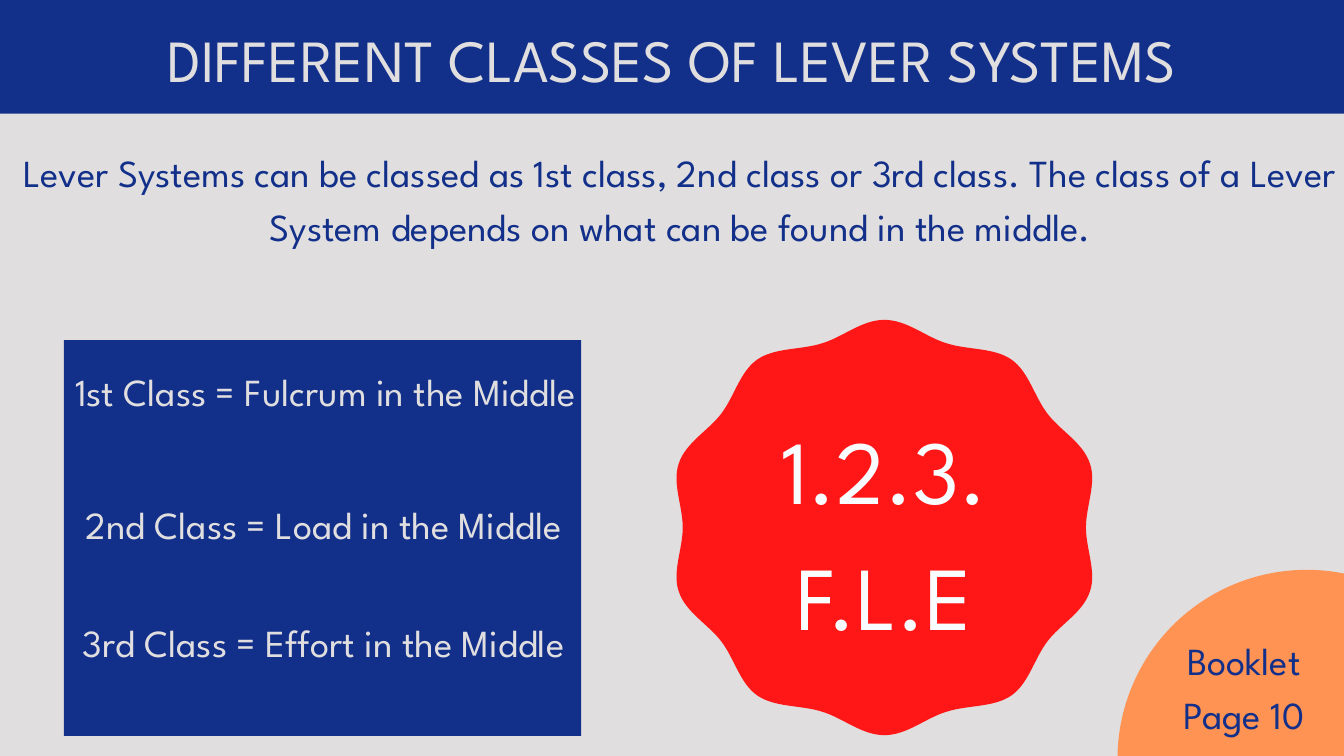
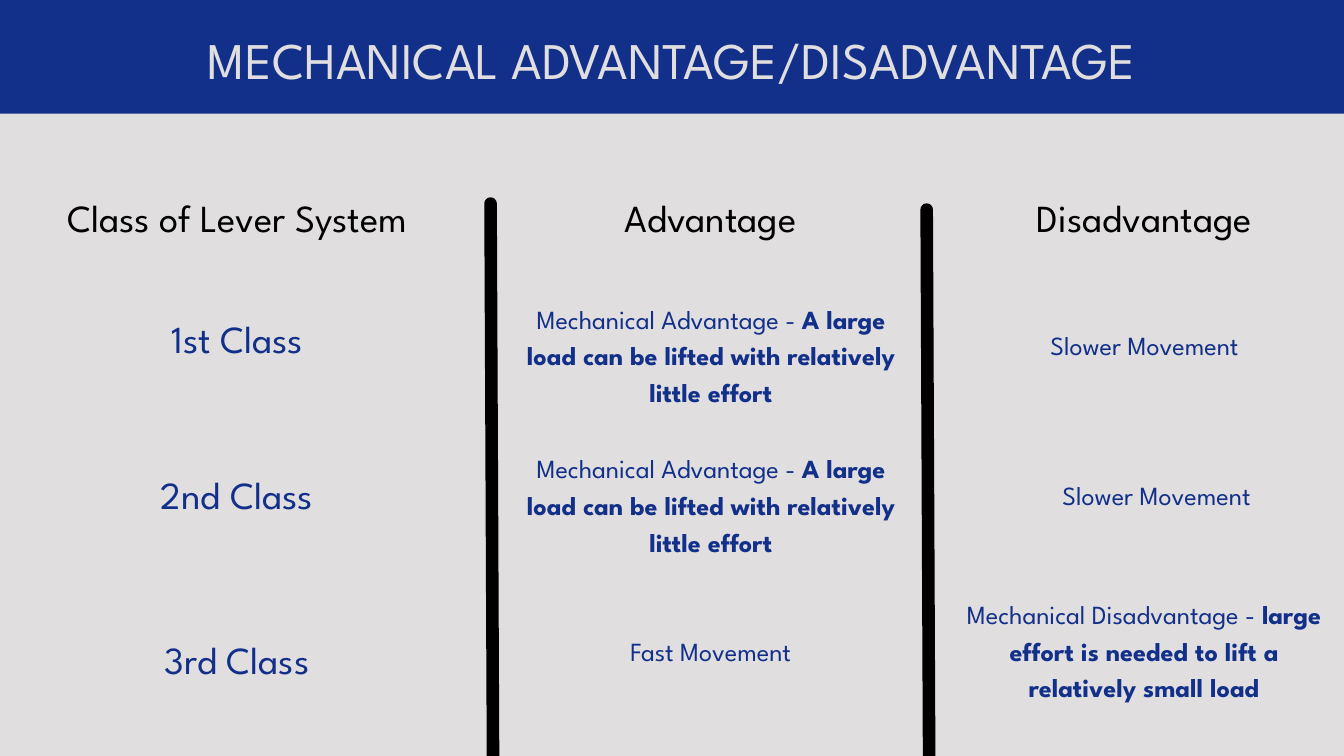
from pptx import Presentation
from pptx.dml.color import RGBColor
from pptx.enum.shapes import MSO_CONNECTOR as Conn, MSO_SHAPE as Kind
from pptx.enum.text import MSO_AUTO_SIZE as Fit, PP_ALIGN as Align
from pptx.util import Inches, Pt
from lxml.etree import SubElement
from pptx.oxml.ns import qn

BLUE, GREY, ORANGE, RED = "12308A", "E0DEDF", "FF9353", "FF1616"
BLACK, WHITE = "000000", "F8FCFE"
FONT = "League Spartan"


def paint(shape, hue):
    """Give a shape a plain fill with no outline or shadow."""
    shape.fill.solid()
    shape.fill.fore_color.rgb = RGBColor.from_string(hue)
    shape.line.fill.background()
    shape.shadow.inherit = False


def write(slide, text, at, size=41, hue=BLUE, lead=57.5, bold=""):
    """Add centred text, one paragraph per line; bold text follows the last."""
    frame = slide.shapes.add_textbox(*map(Inches, at)).text_frame
    frame.word_wrap = True
    frame.auto_size = Fit.SHAPE_TO_FIT_TEXT
    frame.margin_left = frame.margin_right = 0
    frame.margin_top = frame.margin_bottom = 0
    for i, row in enumerate(text.split("\n")):
        para = frame.add_paragraph() if i else frame.paragraphs[0]
        para.alignment = Align.CENTER
        para.line_spacing = Pt(lead)
        para.add_run().text = row
    if bold:
        run = para.add_run()
        run.text = bold
        run.font.bold = True
    for para in frame.paragraphs:
        for run in para.runs:
            run.font.name = FONT
            run.font.size = Pt(size)
            run.font.color.rgb = RGBColor.from_string(hue)


deck = Presentation()
deck.slide_width, deck.slide_height = Inches(20), Inches(11.25)

# Shared background, band and title
slides = []
for title, top, high, size, lead in [
    ("DIFFERENT CLASSES OF LEVER SYSTEMS", 0.16, 1.2, 64, 89.6),
    ("MECHANICAL ADVANTAGE/DISADVANTAGE", 0.26, 1.03, 55, 77),
]:
    slide = deck.slides.add_slide(deck.slide_layouts[6])
    slide.background.fill.solid()
    slide.background.fill.fore_color.rgb = RGBColor.from_string(GREY)
    band = slide.shapes.add_shape(
        Kind.RECTANGLE, 0, Inches(-0.03), Inches(20), Inches(1.72))
    paint(band, BLUE)
    slides.append(slide)
    write(slide, title, (-4.23, top, 28.45, high),
          size=size, hue=GREY, lead=lead)
levers, merits = slides

# Slide 1: page marker, badge and class panel
disc = levers.shapes.add_shape(
    Kind.OVAL, *map(Inches, (16.63, 8.48, 5.63, 5.63)))
paint(disc, ORANGE)

# Upper right quarter of the badge: Bezier knots and handles from its centre
arc = [
    (0, -3.09), (0.34, -3.09), (0.62, -2.83),
    (0.93, -2.74), (1.24, -2.64), (1.63, -2.68),
    (1.89, -2.5), (2.15, -2.32), (2.23, -1.95),
    (2.43, -1.69), (2.62, -1.44), (2.96, -1.26),
    (3.06, -0.95), (3.16, -0.66), (3, -0.32), (3, 0),
]
half = arc + [(x, -y) for x, y in arc[-2::-1]]
ring = half + [(-x, y) for x, y in half[-2:0:-1]]
spots = [(Inches(13.16 + x), Inches(7.85 + y)) for x, y in ring]
draft = levers.shapes.build_freeform(*spots[0])
draft.add_line_segments(spots[1:] + spots[:1], close=True)
badge = draft.convert_to_shape()
paint(badge, RED)

# Join each three straight steps into one curve
steps = list(badge._element.iter(qn("a:lnTo")))
for first, mid, last in zip(steps[::3], steps[1::3], steps[2::3]):
    first.tag = qn("a:cubicBezTo")
    for step in (mid, last):
        first.append(step[0])
        step.getparent().remove(step)

panel = levers.shapes.add_shape(
    Kind.RECTANGLE, *map(Inches, (0.95, 5.06, 7.7, 5.89)))
paint(panel, BLUE)

write(levers, "Booklet \nPage 10 ", (17.35, 9.37, 2.47, 1.55))
write(levers, "Lever Systems can be classed as 1st class, 2nd class or 3rd class. "
      "The class of a Lever System depends on what can be found in the middle.",
      (0.26, 2.11, 19.74, 2.37))
for text, left, top, width in [
    ("1st Class = Fulcrum in the Middle", 0.26, 5.36, 9.18),
    ("2nd Class = Load in the Middle", 0.52, 7.34, 8.6),
    ("3rd Class = Effort in the Middle", 0.52, 9.1, 8.6),
]:
    write(levers, text, (left, top, width, 1.58), hue=GREY)
write(levers, "1.2.3.\nF.L.E", (11.23, 5.9, 3.86, 3.69),
      size=96.5, hue=WHITE, lead=135.1)

# Slide 2: headings, rules and three rows of classes
for text, left, width in [
    ("Class of Lever System", 0.33, 6.41),
    ("Advantage", 8.92, 3.31),
    ("Disadvantage", 14.97, 4.12),
]:
    write(merits, text, (left, 2.78, width, 0.78), hue=BLACK)

for left, top in [(7.3, 3.03), (13.79, 3.12)]:
    rule = merits.shapes.add_connector(
        Conn.STRAIGHT, Inches(left + 0.04), Inches(top + 8.91),
        Inches(left), Inches(top))
    rule.line.color.rgb = RGBColor.from_string(BLACK)
    rule.line.width = Pt(13.5)
    rule.line._get_or_add_ln().set("cap", "rnd")
    SubElement(rule._element.spPr, qn("a:effectLst"))

for text, left, top, width in [
    ("1st Class", 2.31, 4.57, 2.45),
    ("2nd Class", 2.08, 6.89, 2.9),
    ("3rd Class", 2.15, 9.35, 2.76),
]:
    write(merits, text, (left, top, width, 0.78))

gain = "A large load can be lifted with relatively little effort"
loss = " large effort is needed to lift a relatively small load"
for text, bold, at in [
    ("Mechanical Advantage - ", gain, (7.74, 4.43, 5.68, 1.62)),
    ("Mechanical Advantage - ", gain, (7.74, 6.66, 5.68, 1.62)),
    ("Fast Movement", "", (9.04, 9.38, 3.07, 0.53)),
    ("Slower Movement", "", (15.19, 4.82, 3.68, 0.53)),
    ("Slower Movement", "", (15.37, 7.05, 3.68, 0.53)),
    ("Mechanical Disadvantage -", loss, (14.26, 8.83, 5.53, 1.62)),
]:
    write(merits, text, at, size=28, lead=39.2, bold=bold)

deck.save("out.pptx")
